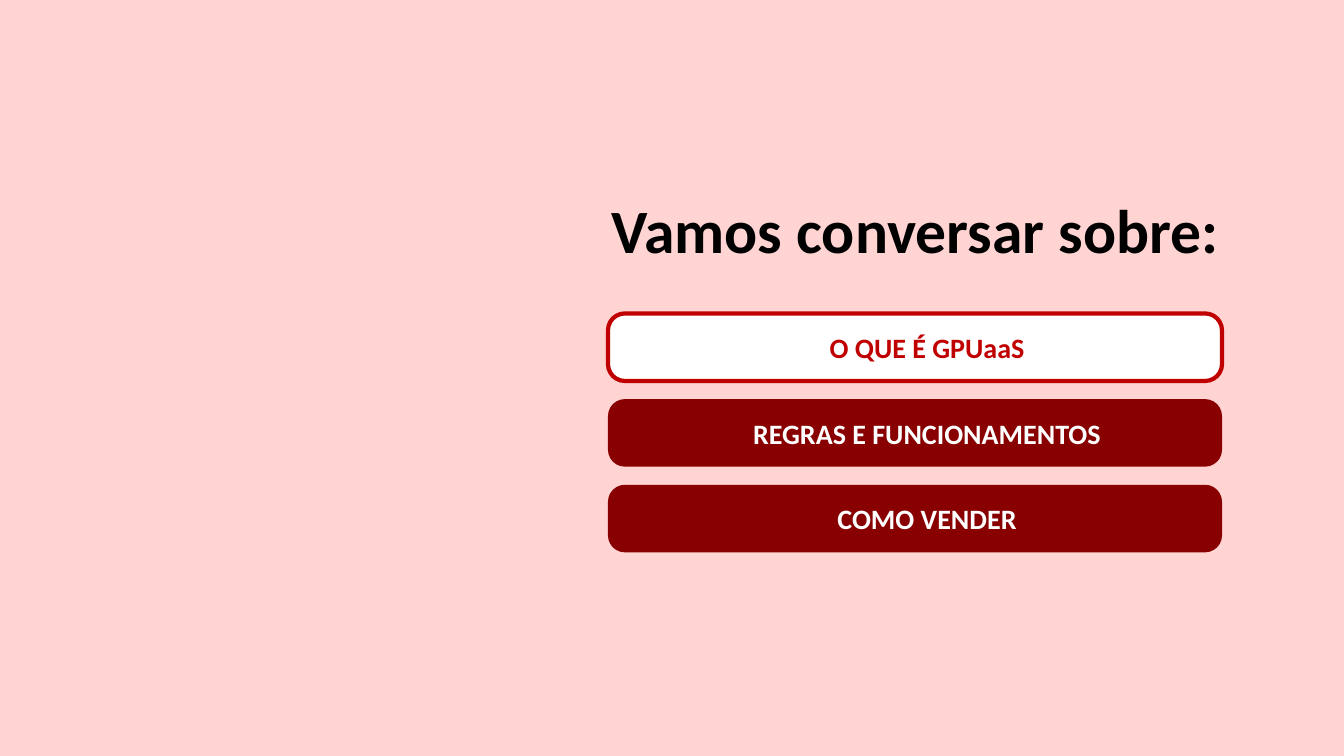
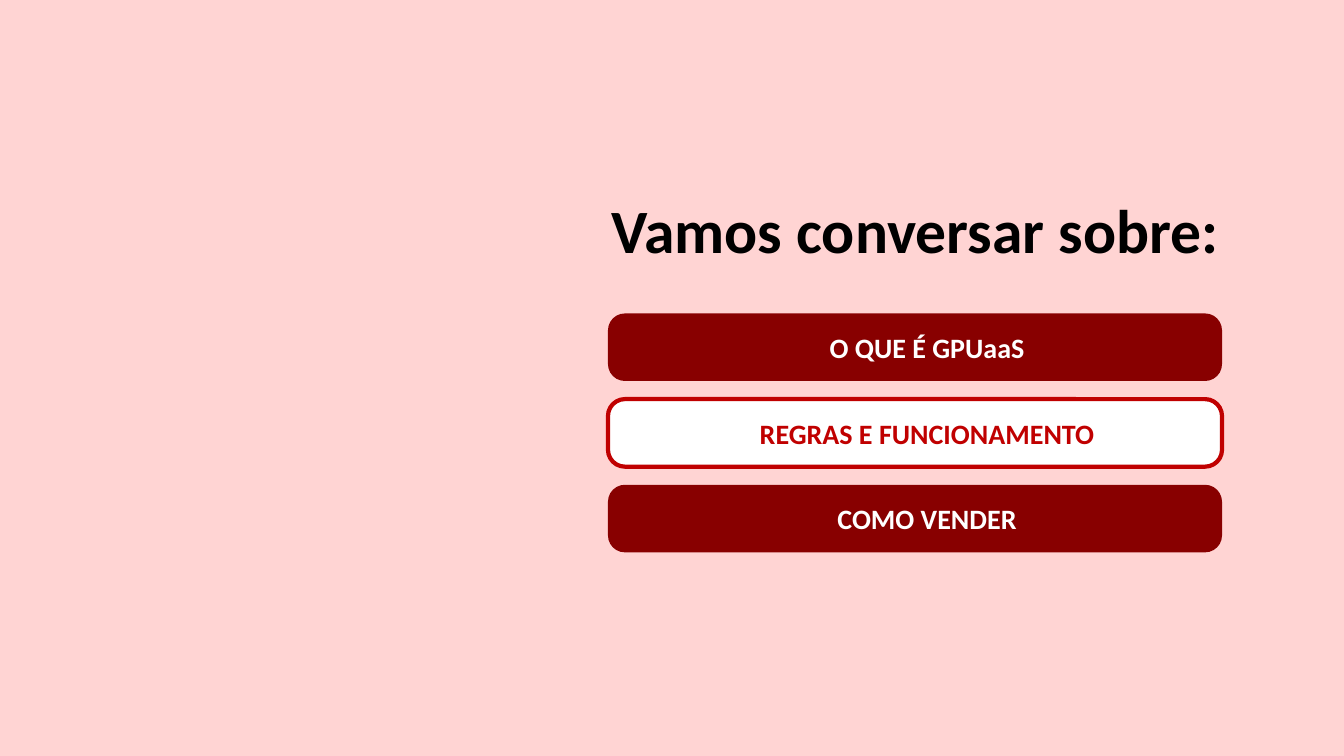
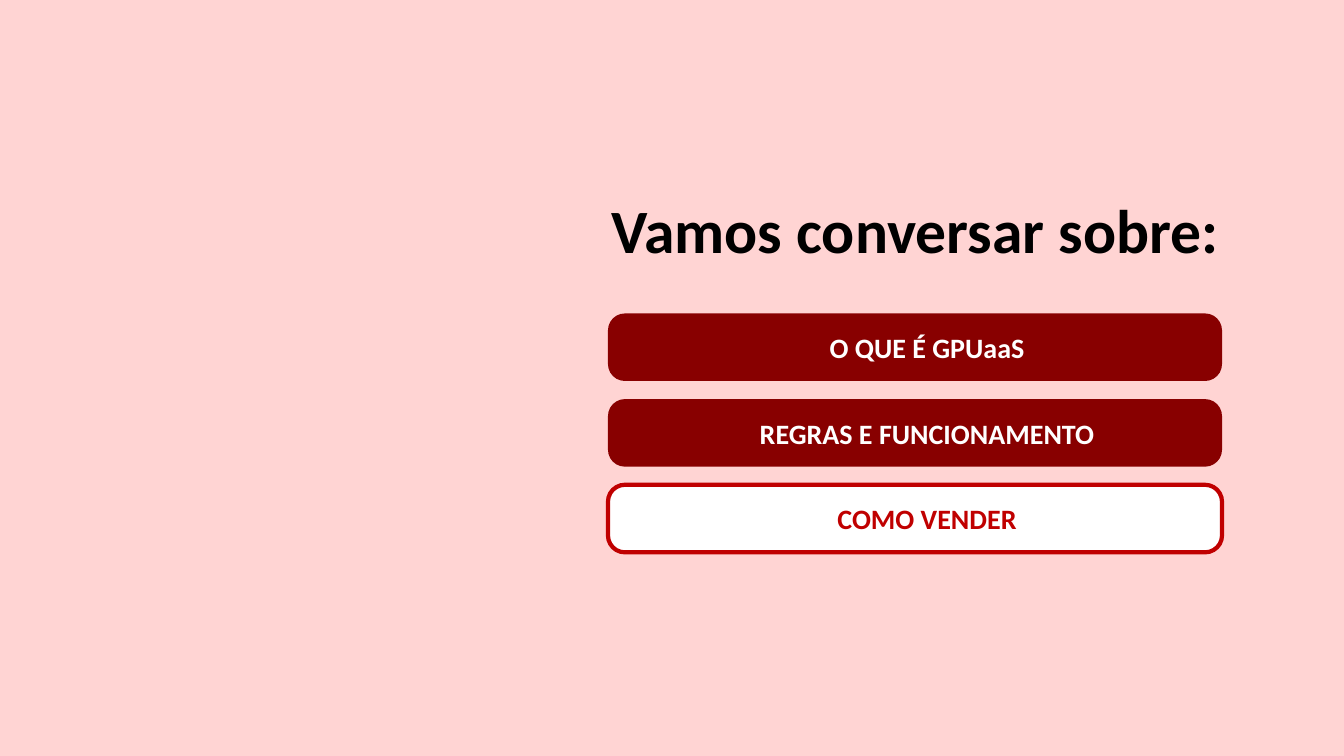
from dataclasses import dataclass

from pptx import Presentation
from pptx.dml.color import RGBColor
from pptx.enum.shapes import MSO_SHAPE
from pptx.enum.text import MSO_ANCHOR, MSO_AUTO_SIZE, PP_ALIGN
from pptx.slide import Slide, SlideLayout
from pptx.text.text import _Paragraph
from pptx.util import Emu, Pt

ROUNDED = MSO_SHAPE.ROUNDED_RECTANGLE
CENTER = PP_ALIGN.CENTER
TOP = MSO_ANCHOR.TOP
MIDDLE = MSO_ANCHOR.MIDDLE
NO_AUTOFIT = MSO_AUTO_SIZE.NONE

EMU_PER_PX = 9144  # 100 px to the inch
TITLE_ONLY = 5


@dataclass(frozen=True)
class Theme:
    font: str = "Calibri"
    background: str = "FFD4D3"
    title: str = "000000"
    bar: str = "880000"
    accent: str = "C00000"
    white: str = "FFFFFF"
    title_pt: int = 44
    bar_pt: int = 20
    outline_pt: int = 3


@dataclass(frozen=True)
class Box:
    left: int
    top: int
    width: int
    height: int


@dataclass(frozen=True)
class Agenda:
    topics: tuple[str, ...]
    current: int


THEME = Theme()
TITLE = "Vamos conversar sobre:"
TITLE_BOX = Box(525, 185, 766, 84)
FIRST_BAR = Box(603, 311, 609, 67)
BAR_PITCH = 85
BAR_INDENT = 24

INTRO, RULES, SELLING = "O QUE É GPUaaS", "REGRAS E FUNCIONAMENTO", "COMO VENDER"
AGENDAS = (
    Agenda((INTRO, "REGRAS E FUNCIONAMENTOS", SELLING), 0),
    Agenda((INTRO, RULES, SELLING), 1),
    Agenda((INTRO, RULES, SELLING), 2),
)


def px(n: int) -> Emu:
    return Emu(n * EMU_PER_PX)


def rgb(color: str) -> RGBColor:
    return RGBColor.from_string(color)


def style(p: _Paragraph, size: int, color: str) -> None:
    p.alignment = CENTER
    p.font.name = THEME.font
    p.font.size = Pt(size)
    p.font.bold = True
    p.font.color.rgb = rgb(color)


def prepare_layout(layout: SlideLayout) -> None:
    """Place the title that every slide inherits."""
    title = layout.placeholders[0]
    title.left, title.top = px(TITLE_BOX.left), px(TITLE_BOX.top)
    title.width, title.height = px(TITLE_BOX.width), px(TITLE_BOX.height)
    title.text_frame.vertical_anchor = TOP
    title.text_frame.auto_size = NO_AUTOFIT


def add_title(slide: Slide) -> None:
    tf = slide.shapes.title.text_frame
    tf.text = TITLE
    style(tf.paragraphs[0], THEME.title_pt, THEME.title)


def add_bar(slide: Slide, index: int, topic: str, current: bool) -> None:
    box = FIRST_BAR
    sp = slide.shapes.add_shape(
        ROUNDED, px(box.left), px(box.top + index * BAR_PITCH),
        px(box.width), px(box.height))
    sp.adjustments[0] = 0.25
    sp.shadow.inherit = False
    sp.fill.solid()
    sp.fill.fore_color.rgb = rgb(THEME.white if current else THEME.bar)
    if current:
        sp.line.color.rgb = rgb(THEME.accent)
        sp.line.width = Pt(THEME.outline_pt)
    else:
        sp.line.fill.background()

    tf = sp.text_frame
    tf.word_wrap = True
    tf.vertical_anchor = MIDDLE
    p = tf.paragraphs[0]
    p.text = topic
    p._p.get_or_add_pPr().set("marL", str(px(BAR_INDENT)))
    style(p, THEME.bar_pt, THEME.accent if current else THEME.white)


def main() -> None:
    prs = Presentation()
    prs.slide_width, prs.slide_height = px(1333), px(750)
    fill = prs.slide_master.background.fill
    fill.solid()
    fill.fore_color.rgb = rgb(THEME.background)
    layout = prs.slide_layouts[TITLE_ONLY]
    prepare_layout(layout)

    for agenda in AGENDAS:
        slide = prs.slides.add_slide(layout)
        add_title(slide)
        for i, topic in enumerate(agenda.topics):
            add_bar(slide, i, topic, i == agenda.current)
    prs.save("out.pptx")


if __name__ == "__main__":
    main()
